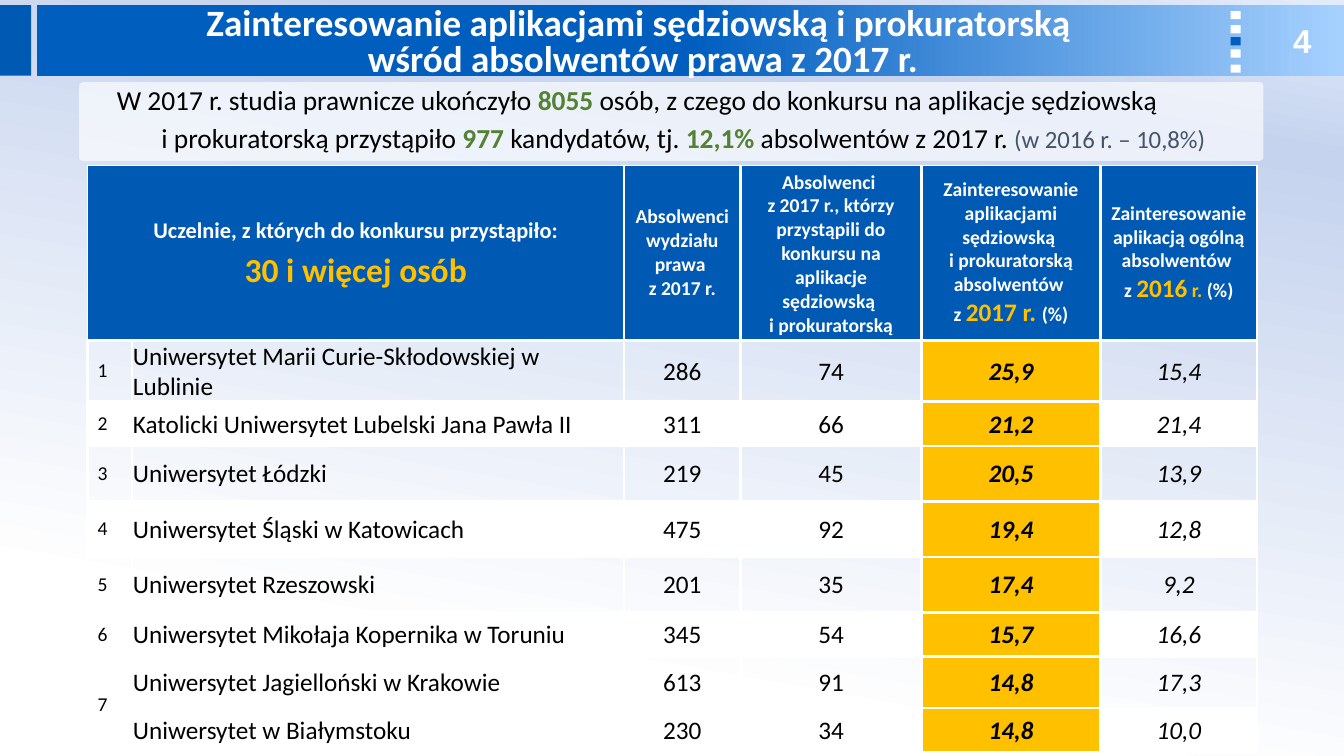
import copy
from dataclasses import dataclass

import lxml.etree
import pptx
import pptx.dml.color
import pptx.enum.shapes
import pptx.enum.text
import pptx.oxml.ns
import pptx.util

Pt = pptx.util.Pt
qn = pptx.oxml.ns.qn
SHAPE = pptx.enum.shapes.MSO_SHAPE
ALIGN = pptx.enum.text.PP_ALIGN
ANCHOR = pptx.enum.text.MSO_ANCHOR


@dataclass(frozen=True)
class Theme:
    """Colours, fonts and type sizes of the slide."""
    white: str = "FFFFFF"
    black: str = "000000"
    navy: str = "005AB4"
    blue: str = "005EBF"
    sky: str = "A6D1FF"
    haze: str = "C5D3EE"
    mist: str = "E1EBFB"
    gold: str = "FFC000"
    green: str = "548235"
    slate: str = "44546A"
    font: str = "Calibri"
    number_font: str = "Arial"
    title: float = 26.5
    page: float = 23.6
    intro: float = 19.6
    note: float = 17.7
    group: float = 24
    lead: float = 16
    body: float = 18
    small: float = 14


T = Theme()

HEADINGS = [
    [[("Uczelnie, z których do konkursu przystąpiło:", {"size": T.lead})],
     [("30 i więcej osób", {"size": T.group, "color": T.gold})]],
    [[("Absolwenci wydziału prawa \nz 2017 r.", {})]],
    [[("Absolwenci \nz 2017 r., którzy przystąpili do konkursu na aplikacje sędziowską ", {})],
     [("i prokuratorską", {})]],
    [[("Zainteresowanie aplikacjami sędziowską ", {})],
     [("i prokuratorską absolwentów \nz ", {}),
      ("2017 r. ", {"size": T.body, "color": T.gold}), ("(%)", {})]],
    [[("Zainteresowanie aplikacją ogólną absolwentów \nz ", {}),
      ("2016", {"size": T.body, "color": T.gold}),
      (" r.", {"color": T.gold}), (" (%)", {})]],
]

SCHOOLS = [
    ("1", "Uniwersytet Marii Curie-Skłodowskiej w Lublinie", "286", "74", "25,9", "15,4"),
    ("2", "Katolicki Uniwersytet Lubelski Jana Pawła II", "311", "66", "21,2", "21,4"),
    ("3", "Uniwersytet Łódzki", "219", "45", "20,5", "13,9"),
    ("4", "Uniwersytet Śląski w Katowicach", "475", "92", "19,4", "12,8"),
    ("5", "Uniwersytet Rzeszowski", "201", "35", "17,4", "9,2"),
    ("6", "Uniwersytet Mikołaja Kopernika w Toruniu", "345", "54", "15,7", "16,6"),
    ("7", "Uniwersytet Jagielloński w Krakowie", "613", "91", "14,8", "17,3"),
    ("", "Uniwersytet w Białymstoku", "230", "34", "14,8", "10,0"),
]
COLUMNS = [31.7, 351.4, 83.5, 128.9, 128.2, 111.6]
ROWS = [123.1, 41.8, 31.7, 39.6, 39.6, 39.6, 31.7, 36.7, 31.7]


def rgb(code):
    """Turn a hex code into a colour."""
    return pptx.dml.color.RGBColor.from_string(code)


def add_runs(p, runs, **base):
    """Add formatted runs to a paragraph, with line breaks at newlines."""
    for text, changes in runs:
        look = {"name": T.font, "color": T.black, **base, **changes}
        color = look.pop("color")
        look["size"] = Pt(look["size"])
        for i, line in enumerate(text.split("\n")):
            if i:
                p.add_line_break()
            r = p.add_run()
            r.text = line
            r.font.color.rgb = rgb(color)
            for key, value in look.items():
                setattr(r.font, key, value)


def fill_text(tf, paragraphs, align=ALIGN.CENTER, spacing=1.0, **base):
    """Write paragraphs of runs into a text frame."""
    for i, runs in enumerate(paragraphs):
        p = tf.add_paragraph() if i else tf.paragraphs[0]
        p.alignment, p.line_spacing = align, spacing
        add_runs(p, runs, **base)


def add_block(s, box, color, kind=SHAPE.RECTANGLE):
    """Draw a filled shape without outline or shadow."""
    sp = s.shapes.add_shape(kind, *map(Pt, box))
    sp.shadow.inherit = False
    sp.line.fill.background()
    sp.fill.solid()
    sp.fill.fore_color.rgb = rgb(color)
    return sp


def add_gradient(s, box, stops, angle):
    """Draw a rectangle with a linear gradient."""
    sp = add_block(s, box, T.white)
    sp.fill.gradient()
    sp.fill.gradient_angle = angle
    stop_list = sp._element.spPr.find(".//" + qn("a:gsLst"))
    for _ in stops[2:]:
        stop_list.append(copy.deepcopy(stop_list[-1]))
    for stop, (position, color) in zip(sp.fill.gradient_stops, stops):
        stop.position = position
        stop.color.rgb = rgb(color)


def add_banner(s, box):
    """Draw the top band with its dotted mark and page number."""
    x, y, w, h = box
    add_gradient(s, (x + 26.6, y, w - 26.6, h), [(0.5, T.blue), (1, T.sky)], 0)
    add_block(s, (x, y, 22.3, h), T.navy)
    for i, top in enumerate((4.3, 14.4, 23, 31.7, 42.5)):
        add_block(s, (x + 879.1, y + top, 7.2, 5.8), T.blue if i == 2 else T.white)
    tf = s.shapes.add_textbox(*map(Pt, (x + 908.6, y + 7.2, 43.2, 36))).text_frame
    tf.vertical_anchor = ANCHOR.MIDDLE
    fill_text(tf, [[("4", {})]], name=T.number_font, size=T.page, color=T.white, bold=True)


def add_title(s, box):
    """Move and format the title placeholder."""
    sp = s.shapes.title
    sp._element.getparent().append(sp._element)
    for key, value in zip(("left", "top", "width", "height"), box):
        setattr(sp, key, Pt(value))
    tf = sp.text_frame
    tf.vertical_anchor = ANCHOR.TOP
    tf.auto_size = pptx.enum.text.MSO_AUTO_SIZE.NONE
    title = "Zainteresowanie aplikacjami sędziowską i prokuratorską \nwśród absolwentów prawa z 2017 r."
    fill_text(tf, [[(title, {})]], spacing=0.8, size=T.title, color=T.white, bold=True)


def add_intro(s, box):
    """Draw the pale panel with the summary sentence."""
    x, y, w, h = box
    sp = add_block(s, box, T.white, SHAPE.ROUNDED_RECTANGLE)
    sp.adjustments[0] = 0.05
    color = sp._element.spPr.find(qn("a:solidFill"))[0]
    lxml.etree.SubElement(color, qn("a:alpha"), val="65000")
    tf = s.shapes.add_textbox(*map(Pt, (x + 16.9, y - 6.1, w - 16.6, 61.9))).text_frame
    tf.word_wrap = True
    key = {"color": T.green, "bold": True}
    fill_text(tf, [
        [("W 2017 r. studia prawnicze ukończyło ", {}), ("8055 ", key),
         ("osób, z czego do konkursu na aplikacje sędziowską", {})],
        [("i prokuratorską przystąpiło ", {}), ("977", key), (" kandydatów, tj. ", {}),
         ("12,1% ", key), ("absolwentów z 2017 r. ", {}),
         ("(w 2016 r. – 10,8%)", {"size": T.note, "color": T.slate})],
    ], spacing=1.15, size=T.intro)
    first = tf.paragraphs[0]
    first.alignment = ALIGN.LEFT
    first._p.get_or_add_pPr().set("marL", str(Pt(3)))


def style_cell(cell, row, col):
    """Set the borders, fill and margins of a table cell."""
    header, number = row == 0, col == 0
    split = row >= 7
    thin = {"L": header and number or split and col == 1,
            "R": header and col == 5 or split and number, "T": header, "B": False}
    tc_pr = cell._tc.get_or_add_tcPr()
    for side, is_thin in thin.items():
        ln = lxml.etree.SubElement(tc_pr, qn("a:ln" + side), w=str(Pt(1 if is_thin else 2.25)))
        solid = lxml.etree.SubElement(ln, qn("a:solidFill"))
        lxml.etree.SubElement(solid, qn("a:srgbClr"), val=T.white)
    color = T.navy if header else T.gold if col == 4 else None if row % 2 else T.white
    if color:
        cell.fill.solid()
        cell.fill.fore_color.rgb = rgb(color)
    else:
        cell.fill.background()
    wide = header or number
    margins = (7.2, 7.2, 3.6, 3.6) if wide else (0.72, 0.72, 0.72, 0)
    for side, value in zip(("left", "right", "top", "bottom"), margins):
        setattr(cell, "margin_" + side, Pt(value))
    cell.vertical_anchor = ANCHOR.MIDDLE


def add_results(s, box):
    """Build the table of universities."""
    table = s.shapes.add_table(len(ROWS), len(COLUMNS), *map(Pt, box)).table
    table.first_row = table.horz_banding = False
    for column, width in zip(table.columns, COLUMNS):
        column.width = Pt(width)
    for row, height in zip(table.rows, ROWS):
        row.height = Pt(height)
    for i in range(len(ROWS)):
        for j in range(len(COLUMNS)):
            style_cell(table.cell(i, j), i, j)
    table.cell(0, 0).merge(table.cell(0, 1))
    table.cell(7, 0).merge(table.cell(8, 0))
    for j, heading in zip((0, 2, 3, 4, 5), HEADINGS):
        fill_text(table.cell(0, j).text_frame, heading, spacing=1.0 if j else 1.15,
                  size=T.small, color=T.white, bold=True)
    for i, school in enumerate(SCHOOLS, 1):
        for j, text in enumerate(school):
            if text:
                fill_text(table.cell(i, j).text_frame, [[(text, {})]],
                          ALIGN.CENTER if j > 1 else ALIGN.LEFT,
                          size=T.body if j else T.small, bold=j == 4, italic=j > 3)


def main():
    """Build and save the presentation."""
    prs = pptx.Presentation()
    prs.slide_width, prs.slide_height = Pt(960), Pt(540)
    s = prs.slides.add_slide(prs.slide_layouts[5])
    add_gradient(s, (0, 0, 960, 540), [(0.19, T.white), (0.84, T.haze), (1, T.mist)], 80)
    add_banner(s, (0, 3.6, 960, 50.4))
    add_intro(s, (56.5, 58.7, 846, 56.2))
    add_results(s, (62.6, 118.1, 835.2, 413.3))
    add_title(s, (83.5, 2.2, 751.7, 59))
    prs.save("out.pptx")


if __name__ == "__main__":
    main()
